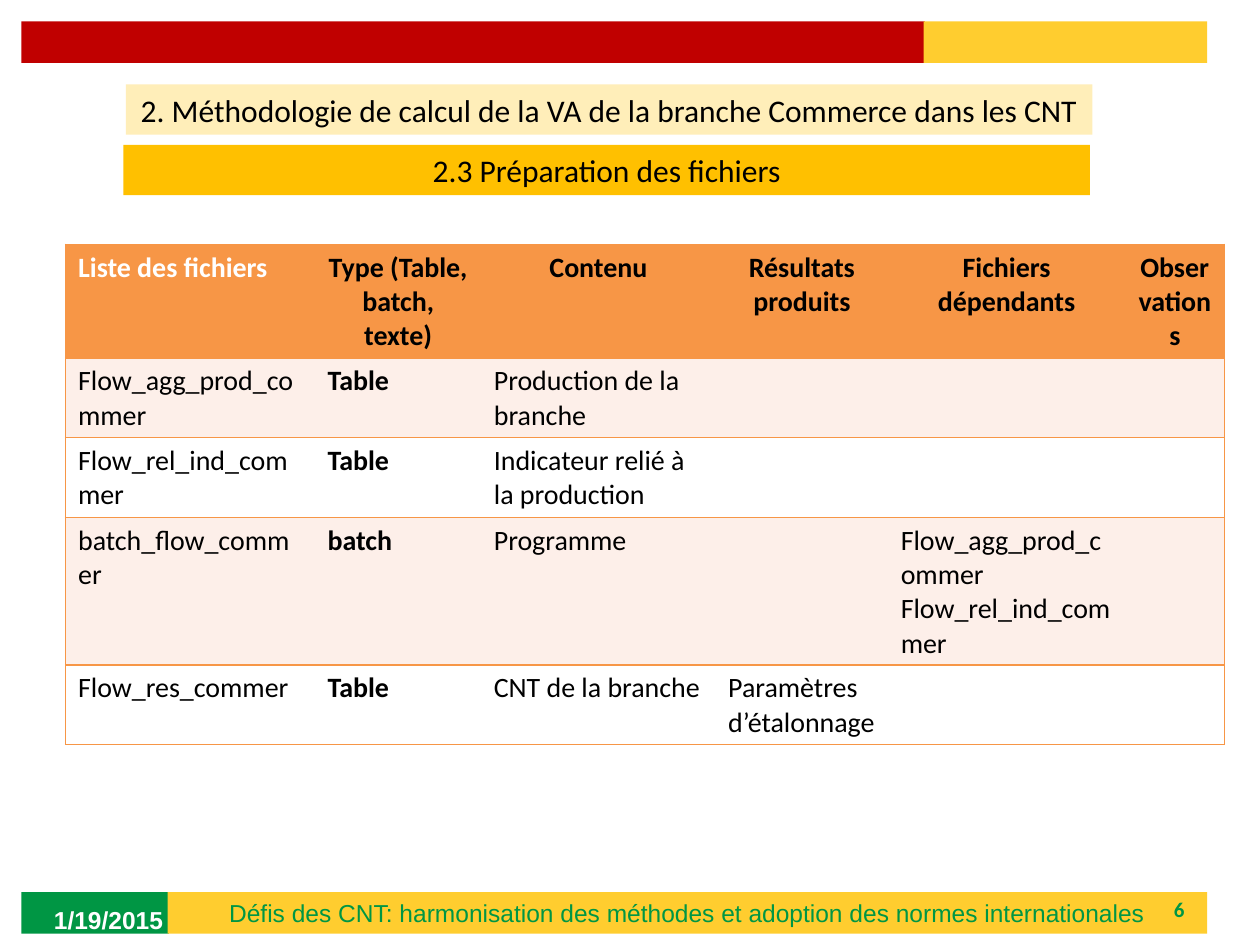
from lxml import etree
from pptx import Presentation
from pptx import util as u
from pptx.dml.color import RGBColor
from pptx.enum import shapes, text
from pptx.oxml import ns

HEX = {
    "green": "009644", "yellow": "FFCD2F", "red": "C00000",
    "cream": "FFEEB9", "amber": "FFC000", "orange": "F79646",
    "pink": "FDEFE9", "white": "FFFFFF", "black": "000000",
}
LEFT, MID, RIGHT = text.PP_ALIGN.LEFT, text.PP_ALIGN.CENTER, text.PP_ALIGN.RIGHT

COLS = [1.98, 1.32, 1.86, 1.37, 1.88, 0.79]
TALL = [0.9, 0.63, 0.63, 1.17, 0.63]
ROWS = [
    ["Liste des fichiers", "Type (Table, batch, texte)", "Contenu",
     "Résultats produits", "Fichiers dépendants", "Observations"],
    ["Flow_agg_prod_commer", "Table", "Production de la branche", "", "", ""],
    ["Flow_rel_ind_commer", "Table", "Indicateur relié à la production", "", "", ""],
    ["batch_flow_commer", "batch", "Programme", "",
     "Flow_agg_prod_commer\nFlow_rel_ind_commer", ""],
    ["Flow_res_commer", "Table", "CNT de la branche",
     "Paramètres d’étalonnage", "", ""],
]


def color(name):
    return RGBColor.from_string(HEX[name])


def write(frame, words, size, ink, face="Calibri", bold=False, align=LEFT):
    """Fill a text frame, one paragraph per line of words."""
    frame.word_wrap = True
    for i, line in enumerate(words.split("\n")):
        para = frame.add_paragraph() if i else frame.paragraphs[0]
        para.alignment = align
        para.font.size = u.Pt(size)
        if not line:
            continue
        run = para.add_run()
        run.text = line
        font = run.font
        font.name, font.size, font.bold = face, u.Pt(size), bold
        font.color.rgb = color(ink)


def bar(slide, box, fill):
    """Add a plain filled rectangle."""
    shape = slide.shapes.add_shape(
        shapes.MSO_SHAPE.RECTANGLE, *map(u.Inches, box))
    shape.shadow.inherit = False
    shape.fill.solid()
    shape.fill.fore_color.rgb = color(fill)
    shape.line.fill.background()
    return shape


def title(slide, box, fill, words):
    frame = bar(slide, box, fill).text_frame
    frame.vertical_anchor = text.MSO_ANCHOR.TOP
    write(frame, words, 18, "black", align=MID)


def label(slide, box, words, size, ink, **style):
    frame = slide.shapes.add_textbox(*map(u.Inches, box)).text_frame
    frame.vertical_anchor = text.MSO_ANCHOR.MIDDLE
    write(frame, words, size, ink, bold=True, **style)


def border(cell, sides):
    """Draw orange lines on the given sides and none on the others."""
    props = cell._tc.get_or_add_tcPr()
    for side in "LRTB":
        line = etree.SubElement(props, ns.qn("a:ln" + side), w=str(u.Pt(1)))
        if side in sides:
            fill = etree.SubElement(line, ns.qn("a:solidFill"))
            etree.SubElement(fill, ns.qn("a:srgbClr"), val=HEX["orange"])
        else:
            etree.SubElement(line, ns.qn("a:noFill"))


def grid(slide, left, top):
    """Add the table of files."""
    table = slide.shapes.add_table(
        len(ROWS), len(COLS), u.Inches(left), u.Inches(top),
        u.Inches(sum(COLS)), u.Inches(sum(TALL))).table
    for col, width in zip(table.columns, COLS):
        col.width = u.Inches(width)
    for r, row in enumerate(ROWS):
        table.rows[r].height = u.Inches(TALL[r])
        for c, words in enumerate(row):
            cell = table.cell(r, c)
            first, last = c == 0, c == len(COLS) - 1
            border(cell, "TB" + "L" * first + "R" * last)
            cell.fill.solid()
            shade = "orange" if r == 0 else "pink" if r % 2 else "white"
            cell.fill.fore_color.rgb = color(shade)
            head = r == 0
            write(cell.text_frame, words, 16,
                  "white" if head and first else "black",
                  bold=head or c == 1,
                  align=MID if head and not first else LEFT)


def main():
    deck = Presentation()
    deck.slide_width, deck.slide_height = u.Inches(10), u.Inches(7.5)
    slide = deck.slides.add_slide(deck.slide_layouts[6])

    # Footer band
    bar(slide, (0.17, 7.08, 1.17, 0.33), "green")
    foot = bar(slide, (1.33, 7.08, 8.25, 0.33), "yellow").text_frame
    write(foot, "Défis des CNT: harmonisation des méthodes et adoption "
          "des normes internationales", 14, "green", "Arial", align=MID)
    label(slide, (7.17, 7.08, 2.33, 0.27), "6", 12, "green", align=RIGHT)
    label(slide, (0.33, 7.1, 2.33, 0.4), "1/19/2015", 14, "white", face="Arial")

    # Header band
    bar(slide, (0.17, 0.17, 7.17, 0.33), "red")
    bar(slide, (7.33, 0.17, 2.25, 0.33), "yellow")

    # Titles
    title(slide, (1, 0.67, 7.67, 0.4), "cream",
          "2. Méthodologie de calcul de la VA de la branche Commerce dans les CNT")
    title(slide, (0.98, 1.15, 7.67, 0.4), "amber", "2.3 Préparation des fichiers")

    # Files
    grid(slide, 0.52, 1.94)
    deck.save("out.pptx")


if __name__ == "__main__":
    main()
